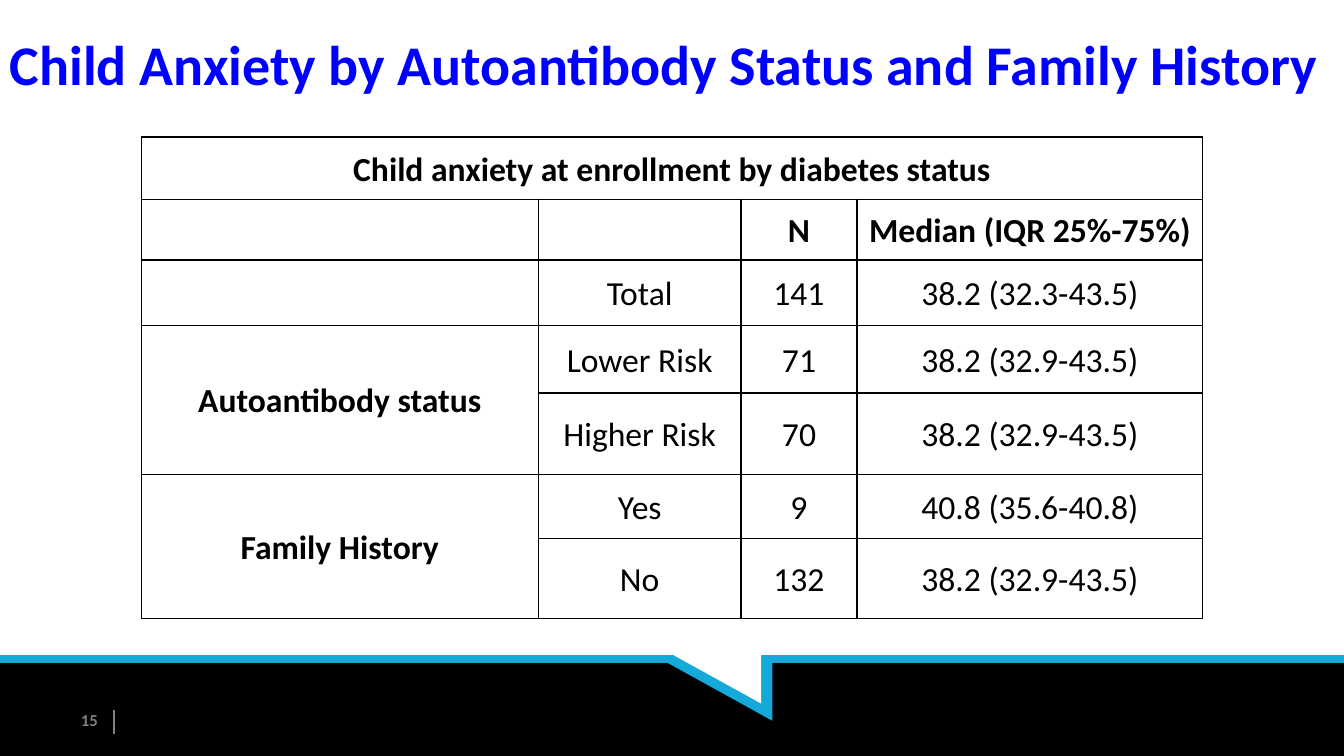
from lxml import etree
from pptx import Presentation
from pptx.dml.color import RGBColor
from pptx.enum.shapes import MSO_CONNECTOR, MSO_SHAPE
from pptx.enum.text import MSO_ANCHOR, PP_ALIGN
from pptx.oxml.ns import qn
from pptx.util import Inches, Pt

# Content
TITLE = "Child Anxiety by Autoantibody Status and Family History"
PAGE_NUMBER = "15"
ROWS = [
    ("Child anxiety at enrollment by diabetes status", "", "", ""),
    ("", "", "N", "Median (IQR 25%-75%)"),
    ("", "Total", "141", "38.2 (32.3-43.5)"),
    ("Autoantibody status", "Lower Risk", "71", "38.2 (32.9-43.5)"),
    ("", "Higher Risk", "70", "38.2 (32.9-43.5)"),
    ("Family History", "Yes", "9", "40.8 (35.6-40.8)"),
    ("", "No", "132", "38.2 (32.9-43.5)"),
]
MERGES = [((0, 0), (0, 3)), ((3, 0), (4, 0)), ((5, 0), (6, 0))]
COLUMN_WIDTHS = [3.94, 2.01, 1.15, 3.43]
ROW_HEIGHTS = [0.62, 0.6, 0.65, 0.67, 0.81, 0.63, 0.8]
HEADER_ROWS = 2

# Style
FONT = "Calibri"
BLACK = RGBColor(0x00, 0x00, 0x00)
WHITE = RGBColor(0xFF, 0xFF, 0xFF)
TITLE_BLUE = RGBColor(0x00, 0x00, 0xFF)
BAND_BLUE = RGBColor(0x14, 0xA9, 0xD8)
TICK_GRAY = RGBColor(0x80, 0x80, 0x80)
NUMBER_GRAY = RGBColor(0x7F, 0x7F, 0x7F)

SLIDE_WIDTH, SLIDE_HEIGHT = 13.33, 7.5
BAND_TOP = 6.54


def add_block(page, kind, left, top, width, height, color, rotation=0):
    block = page.shapes.add_shape(
        kind, Inches(left), Inches(top), Inches(width), Inches(height))
    block.rotation = rotation
    block.shadow.inherit = False
    block.fill.solid()
    block.fill.fore_color.rgb = color
    block.line.fill.background()


def add_line(page, x1, y1, x2, y2, color, width):
    line = page.shapes.add_connector(
        MSO_CONNECTOR.STRAIGHT, Inches(x1), Inches(y1), Inches(x2), Inches(y2))
    line.line.color.rgb = color
    line.line.width = Pt(width)
    etree.SubElement(line._element.spPr, qn("a:effectLst"))


def format_text(para, size, color, bold, align):
    para.alignment = align
    for span in para.runs:
        span.font.name = FONT
        span.font.size = Pt(size)
        span.font.bold = bold
        span.font.color.rgb = color


def add_text(page, text, left, top, width, height, size, color, align):
    box = page.shapes.add_textbox(
        Inches(left), Inches(top), Inches(width), Inches(height))
    frame = box.text_frame
    frame.word_wrap = True
    frame.vertical_anchor = MSO_ANCHOR.MIDDLE
    frame.text = text
    format_text(frame.paragraphs[0], size, color, True, align)


def add_borders(cell):
    properties = cell._tc.get_or_add_tcPr()
    for side in ("a:lnL", "a:lnR", "a:lnT", "a:lnB"):
        border = etree.SubElement(properties, qn(side), w=str(Pt(1)))
        fill = etree.SubElement(border, qn("a:solidFill"))
        etree.SubElement(fill, qn("a:srgbClr"), val=str(BLACK))


def add_anxiety_table(page):
    table = page.shapes.add_table(
        len(ROWS), len(COLUMN_WIDTHS), Inches(1.4), Inches(1.36),
        Inches(sum(COLUMN_WIDTHS)), Inches(sum(ROW_HEIGHTS))).table
    table.first_row = table.horz_banding = False
    for column, width in zip(table.columns, COLUMN_WIDTHS):
        column.width = Inches(width)
    for row, height in zip(table.rows, ROW_HEIGHTS):
        row.height = Inches(height)
    for r, values in enumerate(ROWS):
        for c, value in enumerate(values):
            cell = table.cell(r, c)
            cell.text = value
            cell.vertical_anchor = MSO_ANCHOR.MIDDLE
            cell.margin_left = cell.margin_right = Inches(0.07)
            cell.margin_top = cell.margin_bottom = 0
            add_borders(cell)
            cell.fill.solid()
            cell.fill.fore_color.rgb = WHITE
            para = cell.text_frame.paragraphs[0]
            para.line_spacing = 1.07
            bold = r < HEADER_ROWS or c == 0
            format_text(para, 24, BLACK, bold, PP_ALIGN.CENTER)
    for first, last in MERGES:
        table.cell(*first).merge(table.cell(*last))


def main():
    deck = Presentation()
    deck.slide_width = Inches(SLIDE_WIDTH)
    deck.slide_height = Inches(SLIDE_HEIGHT)
    page = deck.slides.add_slide(deck.slide_layouts[6])

    # Footer band with its notch
    add_block(page, MSO_SHAPE.RECTANGLE, 0, BAND_TOP,
              SLIDE_WIDTH, SLIDE_HEIGHT - BAND_TOP, BLACK)
    add_line(page, 0, BAND_TOP, SLIDE_WIDTH, BAND_TOP, BAND_BLUE, 6)
    for left, top, color in [(6.61, 6.57, BAND_BLUE), (6.5, 6.4, WHITE)]:
        add_block(page, MSO_SHAPE.RIGHT_TRIANGLE, left, top, 1.05, 0.58, color, 180)
    add_line(page, 1.13, 7.04, 1.13, 7.28, TICK_GRAY, 1)

    # Title and page number
    add_text(page, TITLE, 0, 0, 13.27, 1.25, 40, TITLE_BLUE, PP_ALIGN.LEFT)
    add_text(page, PAGE_NUMBER, 0.31, 6.94, 0.76, 0.4, 12, NUMBER_GRAY, PP_ALIGN.RIGHT)

    # Results
    add_anxiety_table(page)
    deck.save("out.pptx")


if __name__ == "__main__":
    main()
